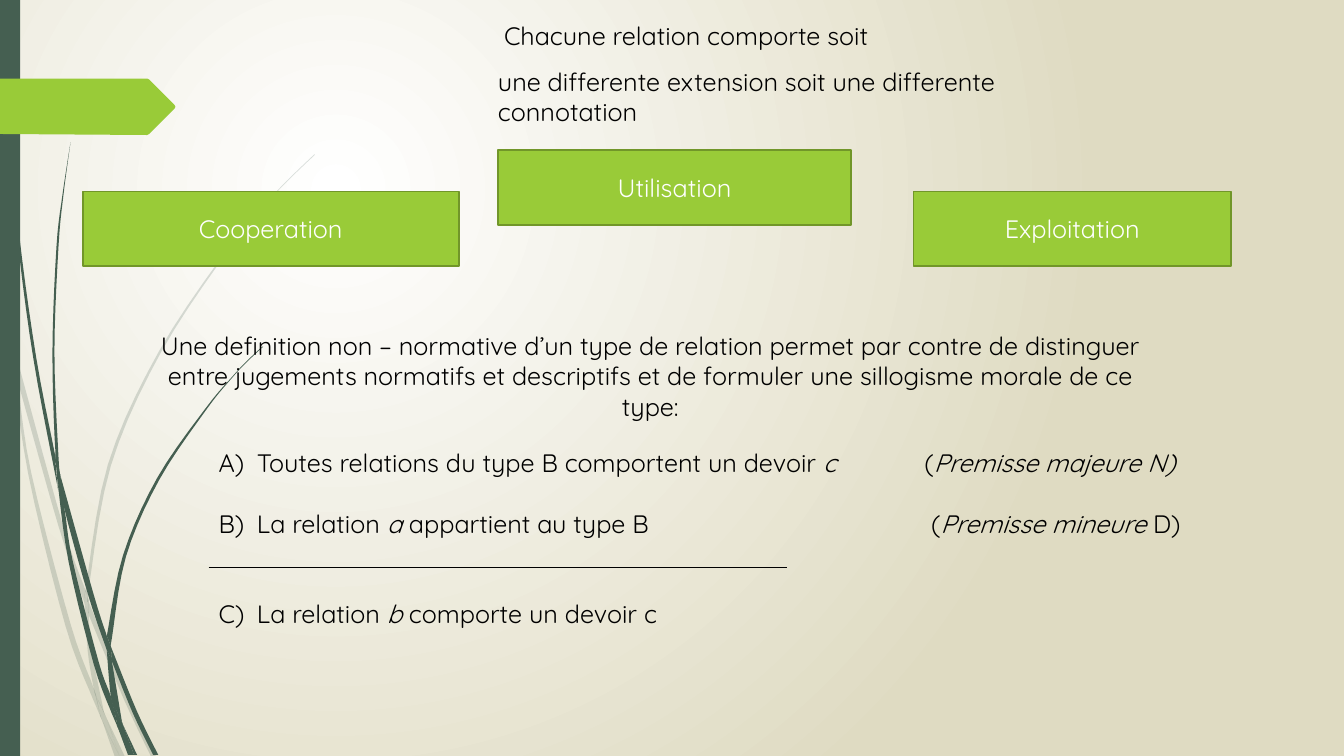
"""Builds the slide on three kinds of relation and the moral syllogism."""
from lxml.etree import SubElement
from pptx import Presentation
from pptx.dml.color import RGBColor
from pptx.enum.shapes import MSO_CONNECTOR, MSO_SHAPE
from pptx.enum.text import MSO_ANCHOR, PP_ALIGN
from pptx.oxml.ns import qn
from pptx.util import Inches, Pt

COLS, ROWS = 1333, 750
WIDTH, HEIGHT = Inches(13.33), Inches(7.5)
THEME = {
    "font": "Quicksand", "size": 18, "text": "000000", "label": "FFFFFF",
    "box": "99CB38", "edge": "719629", "stem": "455F51",
    "centre": "FFFFFF", "rim": "DFDBC2",
    "box_line": 1.25, "rule_line": 0.75, "pale": 20, "solid": 100,
}

RELATIONS = [
    ("Cooperation", (82, 190, 373, 74)),
    ("Utilisation", (494, 149, 350, 74)),
    ("Exploitation", (906, 190, 315, 74)),
]
STATEMENTS = [
    ("Chacune relation comporte soit", (344, 15, 673, 40), PP_ALIGN.CENTER),
    ("Une definition non – normative d’un type de relation permet par contre "
     "de distinguer entre jugements normatifs et descriptifs et de formuler "
     "une sillogisme morale de ce type:", (136, 323, 1018, 71), PP_ALIGN.CENTER),
    ("une differente extension soit une differente connotation",
     (484, 61, 539, 71), PP_ALIGN.LEFT),
]
SYLLOGISM_AT = (207, 439, 1093, 192)
SYLLOGISM = [
    (0, [("Toutes relations du type B comportent un devoir ", False),
         ("c\t", True), ("(", False), ("Premisse majeure N)", True)]),
    (1, [("La relation ", False), ("a ", True),
         ("appartient au type B\t (", False),
         ("Premisse mineure ", True), ("D)", False)]),
    (2, [("La relation ", False), ("b ", True),
         ("comporte un devoir c", False)]),
]
LINE_PITCH, INDENT, NOTE_TAB = 21.5, 38, 700
RULE = ((207, 563), (781, 563))
SIDE_BAR = (0, 0, 20, 750)
BANNER = [(0, 78), (146, 78), (148, 79), (173, 104), (174, 106), (173, 108),
          (148, 133), (146, 134), (0, 133)]

PALE_STEMS = [
    ([(11, 350), (9, 322), (0, 282)], [(0, 299), (10, 344), (11, 350)]),
    ([(14, 345), (62, 520), (85, 586)], [(84, 599), (58, 522), (17, 376)]),
    ([(88, 596), (92, 607), (127, 692), (155, 751)],
     [(150, 751), (123, 694), (88, 610)]),
    ([(105, 711), (124, 751)], [(119, 751), (105, 711)]),
    ([(11, 350), (17, 376), (31, 469), (70, 619), (93, 683), (99, 707), (101, 714)],
     [(92, 693), (65, 621), (28, 470), (11, 350)]),
    ([(84, 599), (87, 646), (93, 683), (96, 692), (105, 711)],
     [(103, 706), (91, 646), (88, 610), (88, 608), (84, 599)]),
    ([(88, 596), (88, 584), (110, 462), (160, 349), (229, 245), (268, 198),
      (290, 175), (312, 154)],
     [(312, 153), (289, 175), (268, 197), (228, 244), (158, 348), (107, 461),
      (85, 584), (85, 586)]),
    ([(101, 714), (114, 751)], [(119, 751), (101, 714)]),
    ([(88, 610), (88, 596), (85, 586)], [(84, 599), (88, 608)]),
    ([(93, 683), (99, 707), (101, 714), (119, 751)],
     [(119, 751), (105, 711), (96, 692)]),
]
DARK_STEMS = [
    ([(3, 0), (4, 48), (7, 110), (17, 233), (33, 355), (56, 477), (57, 481)],
     [(55, 457), (55, 453), (36, 355), (19, 232), (8, 109), (5, 48), (4, 0)]),
    ([(60, 472), (64, 505), (88, 592), (106, 645)],
     [(106, 633), (106, 631), (93, 590), (60, 472)]),
    ([(110, 641), (113, 649), (136, 706), (157, 749)],
     [(152, 749), (132, 708), (111, 656)]),
    ([(57, 477), (64, 505), (72, 556), (98, 657), (110, 691), (116, 717), (117, 722)],
     [(111, 708), (93, 659), (68, 557), (57, 477)]),
    ([(60, 472), (58, 453), (54, 349), (58, 245), (63, 193), (70, 141)],
     [(70, 141), (62, 193), (56, 245), (52, 349), (55, 449), (60, 472)]),
    ([(122, 719), (136, 749)], [(133, 749), (122, 719)]),
    ([(57, 477), (64, 505), (60, 472)], [(55, 449), (55, 453), (57, 477)]),
    ([(110, 641), (111, 633), (125, 552), (158, 476), (205, 406), (231, 374),
      (245, 359), (261, 344)],
     [(260, 344), (245, 358), (231, 373), (204, 405), (156, 474), (122, 551),
      (106, 631)]),
    ([(117, 722), (127, 749)], [(131, 749), (117, 722)]),
    ([(106, 645), (110, 691), (116, 706), (122, 719)],
     [(121, 716), (111, 656), (109, 651), (106, 645)]),
    ([(106, 645), (109, 651), (111, 656), (110, 641)], [(106, 631), (106, 645)]),
    ([(110, 691), (116, 717), (117, 722), (130, 749)],
     [(133, 749), (122, 719), (116, 706)]),
]


def x(col):
    return round(WIDTH * col / COLS)


def y(row):
    return round(HEIGHT * row / ROWS)


def place(at):
    left, top, width, height = at
    return x(left), y(top), x(width), y(height)


def color(name):
    return RGBColor.from_string(THEME[name])


def smooth(edge, steps=5):
    """Return points of a curve that runs through every point of the edge."""
    ends = [edge[0], *edge, edge[-1]]
    points = [edge[0]]
    for a, b, c, d in zip(ends, ends[1:], ends[2:], ends[3:]):
        for t in (i / steps for i in range(1, steps + 1)):
            points.append(tuple(
                q + t / 2 * (r - p + t * (2 * p - 5 * q + 4 * r - u
                                          + t * (3 * q - p - 3 * r + u)))
                for p, q, r, u in zip(a, b, c, d)))
    return points


def paint(shape, fill, alpha=100, line=None):
    shape.shadow.inherit = False
    shape.fill.solid()
    shape.fill.fore_color.rgb = color(fill)
    if alpha < 100:
        rgb = shape._element.spPr.find(".//" + qn("a:srgbClr"))
        SubElement(rgb, qn("a:alpha"), val=str(alpha * 1000))
    if line:
        shape.line.color.rgb = color(line)
        shape.line.width = Pt(THEME["box_line"])
    else:
        shape.line.fill.background()


def outline(shapes, points, fill, alpha=100):
    cells = [(x(col), y(row)) for col, row in points]
    form = shapes.build_freeform(*cells[0])
    form.add_line_segments(cells[1:], close=True)
    paint(form.convert_to_shape(), fill, alpha)


def write(p, text, ink="text", italic=False):
    r = p.add_run()
    r.text = text
    style = {"name": THEME["font"], "size": Pt(THEME["size"]), "italic": italic}
    for key, value in style.items():
        setattr(r.font, key, value)
    r.font.color.rgb = color(ink)


def text_frame(s, at):
    tf = s.shapes.add_textbox(*place(at)).text_frame
    tf.word_wrap = True
    return tf


def add_background(s):
    fill = s.background.fill
    fill.gradient()
    for stop, name in zip(fill.gradient_stops, ("centre", "rim")):
        stop.color.rgb = color(name)
    lin = s._element.find(".//" + qn("a:lin"))
    grad = lin.getparent()
    grad.remove(lin)
    path = SubElement(grad, qn("a:path"), path="circle")
    SubElement(path, qn("a:fillToRect"), l="50000", t="50000", r="100000", b="100000")


def add_syllogism(s):
    tf = text_frame(s, SYLLOGISM_AT)
    for i, (gap, runs) in enumerate(SYLLOGISM):
        p = tf.add_paragraph() if i else tf.paragraphs[0]
        pPr = p._p.get_or_add_pPr()
        pPr.set("marL", str(x(INDENT)))
        pPr.set("indent", str(-x(INDENT)))
        SubElement(pPr, qn("a:buAutoNum"), type="alphaUcParenR")
        tabs = SubElement(pPr, qn("a:tabLst"))
        SubElement(tabs, qn("a:tab"), pos=str(x(NOTE_TAB)), algn="l")
        p.space_before = Pt(gap * LINE_PITCH)
        for text, italic in runs:
            write(p, text, italic=italic)
    (x1, y1), (x2, y2) = RULE
    rule = s.shapes.add_connector(MSO_CONNECTOR.STRAIGHT, x(x1), y(y1), x(x2), y(y2))
    rule.line.color.rgb = color("text")
    rule.line.width = Pt(THEME["rule_line"])
    SubElement(rule._element.spPr, qn("a:effectLst"))


def main():
    prs = Presentation()
    prs.slide_width, prs.slide_height = WIDTH, HEIGHT
    s = prs.slides.add_slide(prs.slide_layouts[6])
    add_background(s)
    for stems, tone in ((PALE_STEMS, "pale"), (DARK_STEMS, "solid")):
        group = s.shapes.add_group_shape()
        for near, far in stems:
            outline(group.shapes, smooth(near) + smooth(far), "stem", THEME[tone])
    paint(s.shapes.add_shape(MSO_SHAPE.RECTANGLE, *place(SIDE_BAR)), "stem")
    outline(s.shapes, BANNER, "box")
    for label, at in RELATIONS:
        sp = s.shapes.add_shape(MSO_SHAPE.RECTANGLE, *place(at))
        paint(sp, "box", line="edge")
        sp.text_frame.vertical_anchor = MSO_ANCHOR.MIDDLE
        p = sp.text_frame.paragraphs[0]
        p.alignment = PP_ALIGN.CENTER
        write(p, label, "label")
    for text, at, align in STATEMENTS:
        p = text_frame(s, at).paragraphs[0]
        p.alignment = align
        write(p, text)
    add_syllogism(s)
    prs.save("out.pptx")


if __name__ == "__main__":
    main()
